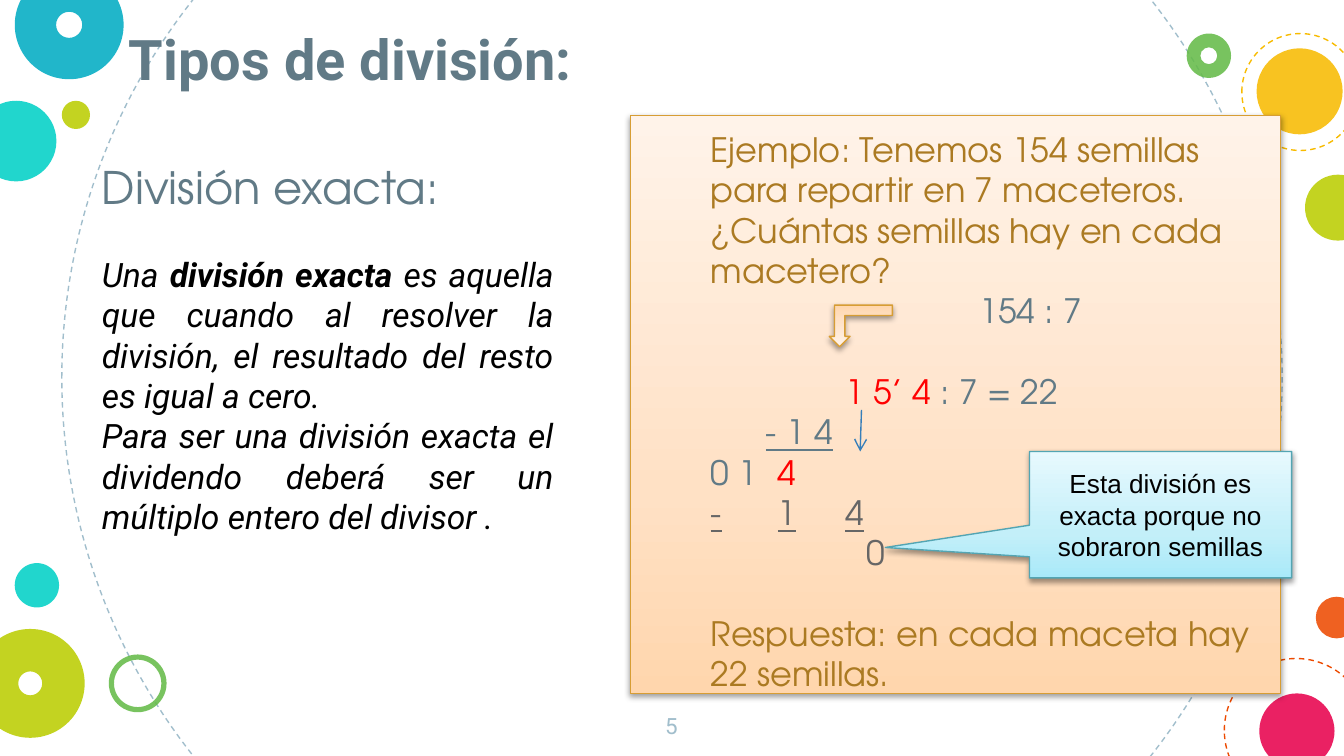
import pptx
import pptx.dml.color
import pptx.enum.dml
import pptx.enum.shapes
import pptx.enum.text
import pptx.oxml
import pptx.oxml.ns
import pptx.util
from lxml import etree

Inches = pptx.util.Inches
Pt = pptx.util.Pt
RGBColor = pptx.dml.color.RGBColor
Shapes = pptx.enum.shapes.MSO_SHAPE
Align = pptx.enum.text.PP_ALIGN
Anchor = pptx.enum.text.MSO_ANCHOR
qn = pptx.oxml.ns.qn

# Colours
BLACK = RGBColor(0x00, 0x00, 0x00)
SLATE = RGBColor(0x61, 0x7A, 0x86)
PALE_BLUE = RGBColor(0xA1, 0xBE, 0xCC)
BROWN = RGBColor(0xAB, 0x7A, 0x22)
RED = RGBColor(0xFF, 0x00, 0x00)
GREY = RGBColor(0x66, 0x66, 0x66)
BLUE = RGBColor(0x36, 0x7E, 0xB9)
TURQUOISE = RGBColor(0x00, 0xD1, 0xC6)
TEAL = RGBColor(0x00, 0xAC, 0xC3)
LIME = RGBColor(0xBB, 0xCD, 0x00)
GREEN = RGBColor(0x65, 0xBB, 0x48)
YELLOW = RGBColor(0xF8, 0xBB, 0x00)
ORANGE = RGBColor(0xED, 0x4A, 0x00)
PINK = RGBColor(0xE8, 0x00, 0x4C)
GOLD = RGBColor(0xD7, 0x9D, 0x34)
SEA = RGBColor(0x53, 0xA5, 0xB3)
PEACH_STOPS = (RGBColor(0xFF, 0xD6, 0xAD), RGBColor(0xFF, 0xE1, 0xC5), RGBColor(0xFF, 0xF3, 0xE9))
AQUA_STOPS = (RGBColor(0xA9, 0xE9, 0xF9), RGBColor(0xC3, 0xEF, 0xF9), RGBColor(0xE7, 0xF9, 0xFE))

BODY = "Roboto"
DISPLAY = "TeX Gyre Adventor"
BLANK_LINE = 21.6


def add_run(paragraph, text, font=DISPLAY, size=18, color=SLATE, bold=False, italic=False,
            underline=False):
    run = paragraph.add_run()
    run.text = text
    run.font.name = font
    run.font.size = Pt(size)
    run.font.color.rgb = color
    run.font.bold = bold
    run.font.italic = italic
    run.font.underline = underline


class SlideBuilder:
    line_width = Pt(0.75)
    inset = Inches(0.1)
    opacity = 87

    def __init__(self, slide):
        self.slide = slide

    def shape(self, kind, box, adjustments=()):
        shape = self.slide.shapes.add_shape(kind, *map(Inches, box))
        shape.shadow.inherit = False
        for index, value in enumerate(adjustments):
            shape.adjustments[index] = value
        return shape

    def disc(self, left, top, size, color, hole=None):
        kind = Shapes.DONUT if hole else Shapes.OVAL
        disc = self.shape(kind, (left, top, size, size), [hole] if hole else [])
        disc.fill.solid()
        disc.fill.fore_color.rgb = color
        rgb = disc._element.spPr.find(qn("a:solidFill"))[0]
        etree.SubElement(rgb, qn("a:alpha"), val=str(self.opacity * 1000))
        disc.line.fill.background()

    def dashed_circle(self, left, top, size, color):
        circle = self.shape(Shapes.OVAL, (left, top, size, size))
        circle.fill.background()
        circle.line.color.rgb = color
        circle.line.width = self.line_width
        circle.line.dash_style = pptx.enum.dml.MSO_LINE.DASH

    def raised_shape(self, kind, box, stops, line_color, adjustments=()):
        shape = self.shape(kind, box, adjustments)
        # Vertical gradient, darkest at the bottom
        shape.fill.gradient()
        shape.fill.gradient_angle = 90
        properties = shape._element.spPr
        stop_list = properties.find(qn("a:gradFill")).find(qn("a:gsLst"))
        for stop in list(stop_list):
            stop_list.remove(stop)
        for position, color in zip((0, 35, 100), stops):
            stop = etree.SubElement(stop_list, qn("a:gs"), pos=str(position * 1000))
            etree.SubElement(stop, qn("a:srgbClr"), val=str(color))
        shape.line.color.rgb = line_color
        shape.line.width = self.line_width
        # Soft shadow below
        shadow = etree.SubElement(properties.find(qn("a:effectLst")), qn("a:outerShdw"),
                                  blurRad=str(Pt(3.1)), dist=str(Pt(1.6)), dir="5400000",
                                  rotWithShape="0")
        shade = etree.SubElement(shadow, qn("a:srgbClr"), val="000000")
        etree.SubElement(shade, qn("a:alpha"), val="38000")
        return shape

    def text_box(self, box):
        return self.frame(self.slide.shapes.add_textbox(*map(Inches, box)))

    def frame(self, shape, anchor=Anchor.TOP):
        frame = shape.text_frame
        frame.word_wrap = True
        frame.vertical_anchor = anchor
        frame.margin_left = frame.margin_right = self.inset
        frame.margin_top = frame.margin_bottom = self.inset
        return frame

    def paragraph(self, frame, *runs, align=Align.LEFT, indent=0, before=0, tabs=()):
        first = frame.paragraphs[0]
        paragraph = frame.add_paragraph() if first.runs else first
        paragraph.alignment = align
        paragraph.space_before = Pt(before)
        properties = paragraph._p.get_or_add_pPr()
        properties.set("marL", str(Inches(indent)))
        properties.set("indent", "0")
        if tabs:
            tab_list = etree.SubElement(properties, qn("a:tabLst"))
            for position in tabs:
                etree.SubElement(tab_list, qn("a:tab"), pos=str(Inches(position)), algn="l")
        for text, style in runs:
            add_run(paragraph, text, **style)

    def arrow(self, start, end, color):
        arrow = self.slide.shapes.add_connector(
            pptx.enum.shapes.MSO_CONNECTOR.STRAIGHT, *map(Inches, start + end))
        arrow.line.color.rgb = color
        arrow.line.width = self.line_width
        etree.SubElement(arrow.line._get_or_add_ln(), qn("a:tailEnd"), type="arrow")
        etree.SubElement(arrow._element.spPr, qn("a:effectLst"))


presentation = pptx.Presentation()
presentation.slide_width = Inches(10)
presentation.slide_height = Inches(10) * 9 // 16
builder = SlideBuilder(presentation.slides.add_slide(presentation.slide_layouts[6]))

# Background circles
for circle in ((0.46, -1.73, 9.08, PALE_BLUE), (9.11, 4.9, 1.07, ORANGE), (9.24, 0.25, 0.87, YELLOW)):
    builder.dashed_circle(*circle)
for disc in (
    (-0.18, 0.75, 0.6, TURQUOISE), (8.97, 4.26, 0.49, YELLOW, 0.19),
    (0.11, -0.22, 0.81, TEAL, 0.38), (0.46, 0.75, 0.21, LIME),
    (0.81, 4.87, 0.43, GREEN, 0.09), (9.79, 4.44, 0.31, ORANGE),
    (-0.18, 4.68, 0.81, LIME, 0.39), (9.37, 5.16, 0.56, PINK),
    (8.83, 0.25, 0.33, GREEN, 0.31), (9.35, 0.36, 0.64, YELLOW),
    (9.71, 1.3, 0.49, LIME), (0.11, 4.19, 0.33, TURQUOISE),
):
    builder.disc(*disc)

# Page number and title
number = builder.text_box((4.74, 5.2, 0.51, 0.43))
builder.paragraph(number, ("5", dict(font=BODY, size=12, color=PALE_BLUE)), align=Align.CENTER)
title = builder.text_box((0.86, 0.08, 7.65, 0.7))
title.vertical_anchor = Anchor.BOTTOM
builder.paragraph(title, ("Tipos de división:", dict(font=BODY, size=30, bold=True)))

# Definition
italic = dict(font=BODY, color=BLACK, italic=True)
definition = builder.text_box((0.16, 1.09, 4.06, 3.05))
builder.paragraph(definition, ("División exacta:", dict(size=24)), indent=0.5)
builder.paragraph(
    definition, ("Una ", italic), ("división exacta", dict(italic, bold=True)),
    (" es aquella que cuando al resolver la división, el resultado del resto es igual a cero.", italic),
    align=Align.JUSTIFY, indent=0.5, before=BLANK_LINE)
builder.paragraph(
    definition,
    ("Para ser una división exacta el dividendo deberá ser un múltiplo entero del divisor .", italic),
    align=Align.JUSTIFY, indent=0.5)

# Worked example
panel = builder.raised_shape(Shapes.RECTANGLE, (4.69, 0.86, 4.84, 4.3), PEACH_STOPS, GOLD)
example = builder.frame(panel)
brown, red, plain = dict(color=BROWN), dict(color=RED), {}
grey = dict(color=GREY)
builder.paragraph(
    example,
    ("Ejemplo: Tenemos 154 semillas para repartir en 7 maceteros. ¿Cuántas semillas hay en cada macetero?",
     brown), indent=0.5)
builder.paragraph(example, ("154 : 7", plain), indent=2.5)
builder.paragraph(example, ("1 5’ 4 ", red), (": 7 = 22", plain), indent=1.5, before=BLANK_LINE)
builder.paragraph(example, ("- 1 4", dict(underline=True)), indent=0.91)
builder.paragraph(example, ("\t0 1\t", plain), ("4", red), tabs=(1.1, 1.6))
builder.paragraph(example, ("\t", plain), ("-\t1\t4", dict(grey, underline=True)), tabs=(0.91, 1.36, 1.61))
builder.paragraph(example, ("0", grey), indent=1.66)
builder.paragraph(example, ("Respuesta: en cada maceta hay 22 semillas.", brown),
                  indent=0.5, before=BLANK_LINE)

# Callout on the remainder
callout = builder.raised_shape(Shapes.RECTANGULAR_CALLOUT, (7.66, 3.36, 1.95, 0.94),
                               AQUA_STOPS, SEA, (-1.05, 0.26))
builder.paragraph(builder.frame(callout, Anchor.MIDDLE),
                  ("Esta división es exacta porque no sobraron semillas",
                   dict(font="Arial", size=14, color=BLACK)), align=Align.CENTER)

# Arrows of the working
builder.arrow((6.41, 3.05), (6.4, 3.36), BLUE)
bent_arrow = builder.raised_shape(Shapes.BENT_UP_ARROW, (6.17, 2.27, 0.47, 0.31), PEACH_STOPS, GOLD)
bent_arrow.rotation = 180

presentation.save("out.pptx")
